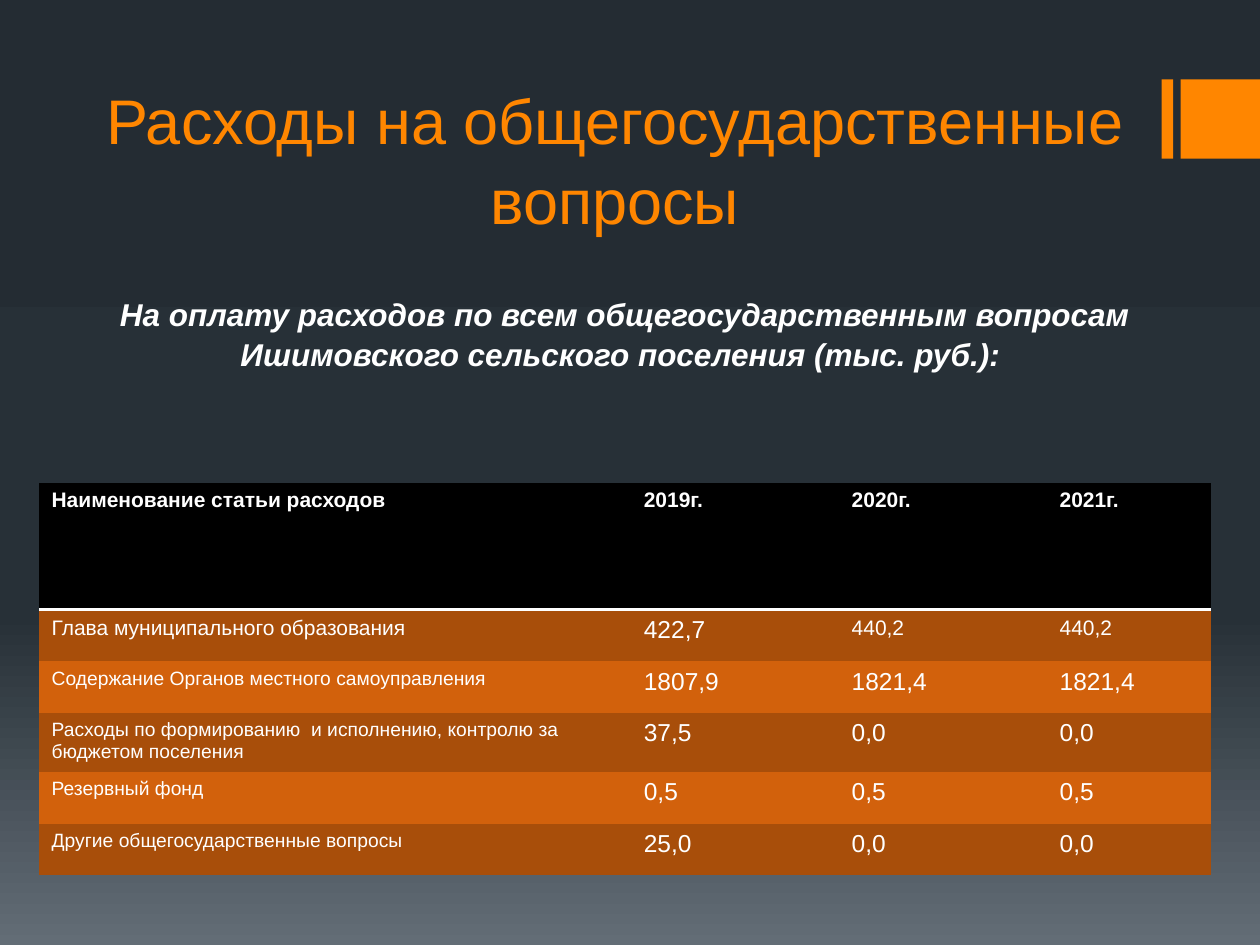
import pptx
import pptx.util
import pptx.dml.color
import pptx.enum.shapes
import pptx.enum.text
import pptx.oxml
import pptx.oxml.ns
from lxml import etree

Inches = pptx.util.Inches
Pt = pptx.util.Pt
RGBColor = pptx.dml.color.RGBColor
CENTER = pptx.enum.text.PP_ALIGN.CENTER

ORANGE = RGBColor(0xFF, 0x86, 0x00)
WHITE = RGBColor(0xFF, 0xFF, 0xFF)
BLACK = RGBColor(0x00, 0x00, 0x00)
ROW_DARK = RGBColor(0xA8, 0x4E, 0x0A)
ROW_LIGHT = RGBColor(0xD2, 0x61, 0x0C)
BACKGROUND_STOPS = [
    (0, RGBColor(0x24, 0x2C, 0x33)),
    (65, RGBColor(0x27, 0x30, 0x37)),
    (100, RGBColor(0x63, 0x6D, 0x76)),
]
NO_TABLE_STYLE = "{2D5ABB26-0587-4C30-8999-92F81FD0307C}"

TITLE = "Расходы на общегосударственные вопросы"
SUBTITLE = [
    "На оплату расходов по всем общегосударственным вопросам",
    "Ишимовского сельского поселения (тыс. руб.): ",
]
HEADER = ["Наименование статьи расходов", "2019г.", "2020г.", "2021г."]
EXPENSES = [
    ["Глава муниципального образования", "422,7", "440,2", "440,2"],
    ["Содержание Органов местного самоуправления", "1807,9", "1821,4", "1821,4"],
    ["Расходы по формированию  и исполнению, контролю за бюджетом поселения",
     "37,5", "0,0", "0,0"],
    ["Резервный фонд", "0,5", "0,5", "0,5"],
    ["Другие общегосударственные вопросы", "25,0", "0,0", "0,0"],
]
HEAD_SIZES = [12, 14, 12, 12]  # first expense row
BODY_SIZES = [11, 14, 14, 14]  # remaining expense rows
COLUMN_WIDTHS = [4.7, 1.65, 1.65, 1.3]
HEADER_HEIGHT, ROW_HEIGHT = 1.01, 0.41


def write_text(frame, lines, size, color=WHITE, bold=False, italic=False,
               align=None, spacing=None):
    frame.word_wrap = True
    for index, line in enumerate(lines):
        paragraph = frame.paragraphs[0] if index == 0 else frame.add_paragraph()
        paragraph.alignment = align
        paragraph.line_spacing = spacing
        run = paragraph.add_run()
        run.text = line
        run.font.name = "Arial"
        run.font.size = Pt(size)
        run.font.bold = bold
        run.font.italic = italic
        run.font.color.rgb = color


def paint_background(slide):
    fill = slide.background.fill
    fill.gradient()
    fill.gradient_angle = 270  # top to bottom
    stops = slide.element.find(".//" + pptx.oxml.ns.qn("a:gsLst"))
    for stop in list(stops):
        stops.remove(stop)
    for position, color in BACKGROUND_STOPS:
        stop = etree.SubElement(stops, pptx.oxml.ns.qn("a:gs"), pos=str(position * 1000))
        etree.SubElement(stop, pptx.oxml.ns.qn("a:srgbClr"), val=str(color))


def add_accent(slide, left, width):
    accent = slide.shapes.add_shape(
        pptx.enum.shapes.MSO_SHAPE.RECTANGLE,
        Inches(left), Inches(0.63), Inches(width), Inches(0.63))
    accent.shadow.inherit = False
    accent.fill.solid()
    accent.fill.fore_color.rgb = ORANGE
    accent.line.fill.background()


def add_title(slide):
    title = slide.shapes.title
    title.left, title.top = Inches(0.3), Inches(0.63)
    title.width, title.height = Inches(9.16), Inches(1.3)
    title.text_frame.vertical_anchor = pptx.enum.text.MSO_ANCHOR.BOTTOM
    write_text(title.text_frame, [TITLE], 36, color=ORANGE, align=CENTER, spacing=1.05)


def add_subtitle(slide):
    subtitle = slide.shapes.add_textbox(
        Inches(0.51), Inches(2.28), Inches(8.9), Inches(0.71))
    write_text(subtitle.text_frame, SUBTITLE, 18, bold=True, italic=True,
               align=CENTER, spacing=1.05)


def fill_cell(cell, text, size, fill, bold=False):
    write_text(cell.text_frame, [text], size, bold=bold)
    cell.fill.solid()
    cell.fill.fore_color.rgb = fill


def underline_cell(cell):
    border = pptx.oxml.parse_xml(
        f'<a:lnB {pptx.oxml.ns.nsdecls("a")} w="{Pt(2)}"><a:solidFill>'
        f'<a:srgbClr val="{WHITE}"/></a:solidFill></a:lnB>')
    # Borders come before the fill in the cell properties
    cell._tc.get_or_add_tcPr().insert(0, border)


def add_expense_table(slide):
    frame = slide.shapes.add_table(
        len(EXPENSES) + 1, len(HEADER), Inches(0.31), Inches(3.83),
        Inches(sum(COLUMN_WIDTHS)), Inches(HEADER_HEIGHT + ROW_HEIGHT * len(EXPENSES)))
    table = frame.table
    table._tbl.tblPr.find(pptx.oxml.ns.qn("a:tableStyleId")).text = NO_TABLE_STYLE
    for column, width in zip(table.columns, COLUMN_WIDTHS):
        column.width = Inches(width)
    for index, row in enumerate(table.rows):
        row.height = Inches(ROW_HEIGHT if index else HEADER_HEIGHT)

    for column, heading in enumerate(HEADER):
        cell = table.cell(0, column)
        fill_cell(cell, heading, 12, BLACK, bold=True)
        underline_cell(cell)
    for row, expense in enumerate(EXPENSES, start=1):
        sizes = HEAD_SIZES if row == 1 else BODY_SIZES
        fill = ROW_DARK if row % 2 else ROW_LIGHT
        for column, (text, size) in enumerate(zip(expense, sizes)):
            fill_cell(table.cell(row, column), text, size, fill)


def main():
    deck = pptx.Presentation()
    deck.slide_width, deck.slide_height = Inches(10), Inches(7.5)
    slide = deck.slides.add_slide(deck.slide_layouts[5])
    paint_background(slide)
    # Accent bars at the right edge
    add_accent(slide, 9.22, 0.09)
    add_accent(slide, 9.37, 0.63)
    add_title(slide)
    add_subtitle(slide)
    add_expense_table(slide)
    deck.save("out.pptx")


if __name__ == "__main__":
    main()
